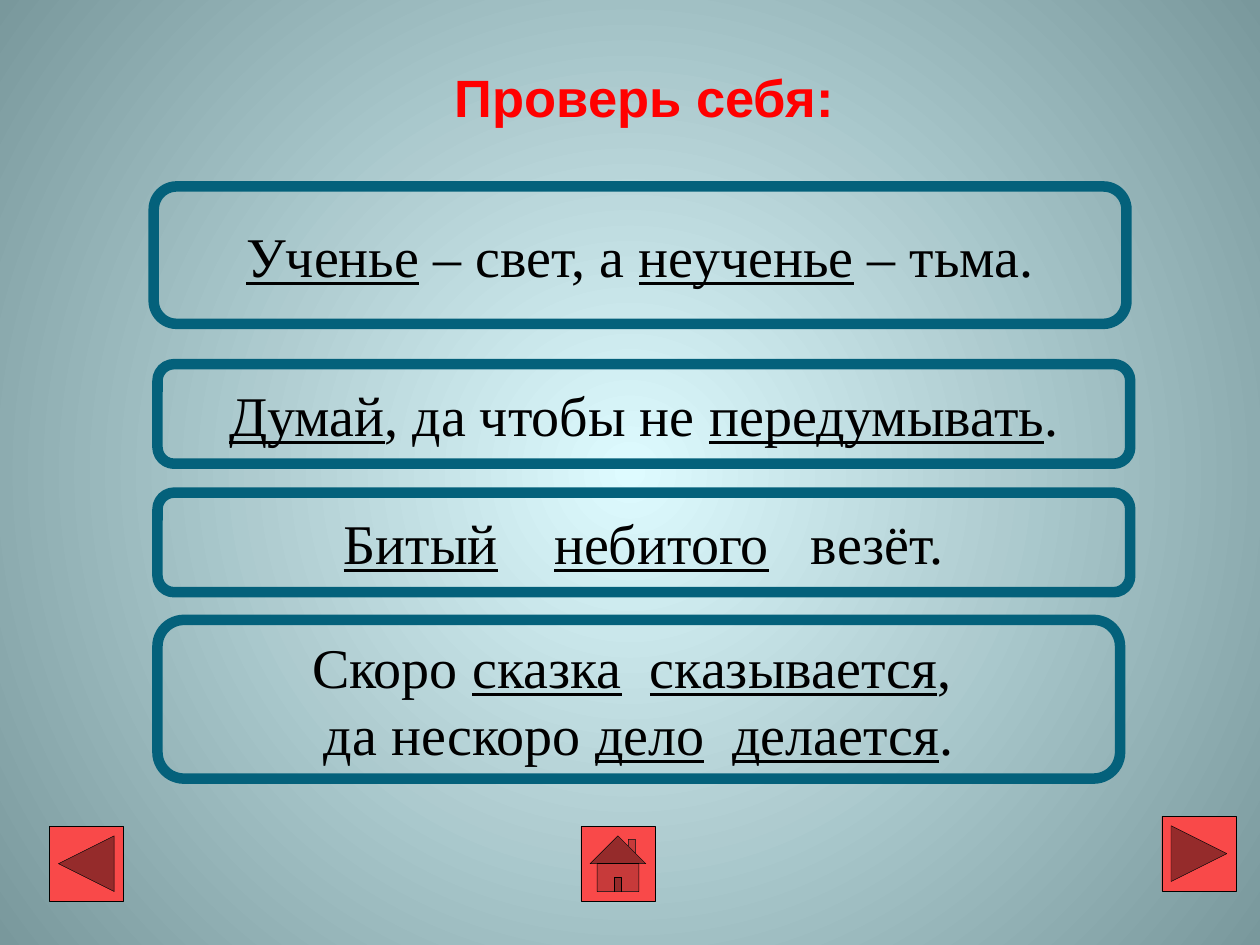
from lxml.etree import SubElement
from pptx import Presentation
from pptx.dml.color import RGBColor
from pptx.enum.shapes import MSO_SHAPE as Shape
from pptx.enum.text import MSO_ANCHOR as Anchor, MSO_AUTO_SIZE as Fit, PP_ALIGN as Align
from pptx.oxml import parse_xml
from pptx.oxml.ns import nsdecls, qn
from pptx.util import Inches, Pt

# Content: each run is (text, underlined, extra width of its space in points)
TITLE = "Проверь себя:"


def word(text):
    return text, True, 0


def plain(text):
    return text, False, 0


def gap(extra):
    return " ", False, extra


PROVERBS = [
    ((1.22, 1.48, 7.72, 1.09),
     [[word("Ученье"), plain(" – свет, а "), word("неученье"), plain(" – тьма.")]]),
    ((1.25, 2.89, 7.72, 0.79),
     [[word("Думай"), plain(", да чтобы не "), word("передумывать"), plain(".")]]),
    ((1.25, 3.91, 7.72, 0.79),
     [[word("Битый"), gap(24), word("небитого"), gap(16), plain("везёт.")]]),
    ((1.25, 4.92, 7.64, 1.26),
     [[plain("Скоро "), word("сказка"), gap(8), word("сказывается"), plain(", ")],
      [plain("да нескоро "), word("дело"), gap(8), word("делается"), plain(".")]]),
]
BUTTONS = [
    (Shape.ACTION_BUTTON_FORWARD_OR_NEXT, 9.22, 6.48),
    (Shape.ACTION_BUTTON_HOME, 4.61, 6.56),
    (Shape.ACTION_BUTTON_BACK_OR_PREVIOUS, 0.39, 6.56),
]
SIDE = 0.59


def color(code):
    return RGBColor.from_string(code)


def style(font, name, size, code):
    font.name, font.size = name, Pt(size)
    font.color.rgb = color(code)


def add_shape(kind, box, line, width, fill=None):
    shape = slide.shapes.add_shape(kind, *map(Inches, box))
    shape.shadow.inherit = False
    if fill:
        shape.fill.solid()
        shape.fill.fore_color.rgb = color(fill)
    else:
        shape.fill.background()
    shape.line.color.rgb = color(line)
    shape.line.width = Pt(width)
    return shape


def add_run(para, text, under, extra):
    run = para.add_run()
    run.text = text
    style(run.font, "Times New Roman", 32, "000000")
    run.font.underline = under
    props = run.font._element
    if extra:
        props.set("spc", str(extra * 100))
    props.insert(0, parse_xml(
        f'<a:ln {nsdecls("a")} w="9525"><a:solidFill>'
        '<a:srgbClr val="000000"/></a:solidFill></a:ln>'))


deck = Presentation()
deck.slide_width, deck.slide_height = Inches(10), Inches(7.5)
slide = deck.slides.add_slide(deck.slide_layouts[6])

# Background: round gradient from the centre
back = slide.background.fill
back.gradient()
for stop, code, place in zip(back.gradient_stops, ("DEFBFF", "79989C"), (0, 1)):
    stop.color.rgb = color(code)
    stop.position = place
grad = slide.background._cSld.find(".//" + qn("a:gradFill"))
grad.remove(grad.find(qn("a:lin")))
circle = SubElement(grad, qn("a:path"), {"path": "circle"})
SubElement(circle, qn("a:fillToRect"), dict.fromkeys("ltrb", "50000"))

# Proverb frames
for box, lines in PROVERBS:
    frame = add_shape(Shape.ROUNDED_RECTANGLE, box, "04617B", 6)
    text = frame.text_frame
    text.word_wrap = False
    text.vertical_anchor = Anchor.MIDDLE
    for i, runs in enumerate(lines):
        para = text.add_paragraph() if i else text.paragraphs[0]
        para.alignment = Align.CENTER
        for run in runs:
            add_run(para, *run)

# Title
title = slide.shapes.add_textbox(*map(Inches, (0.47, 0.47, 9.29, 0.61))).text_frame
title.word_wrap = True
title.auto_size = Fit.SHAPE_TO_FIT_TEXT
title.text = TITLE
head = title.paragraphs[0]
head.alignment = Align.CENTER
style(head.runs[0].font, "Arial", 30, "FF0000")
head.runs[0].font.bold = True

# Navigation buttons
for kind, left, top in BUTTONS:
    add_shape(kind, (left, top, SIDE, SIDE), "000000", 0.25, "F94949")

deck.save("out.pptx")
